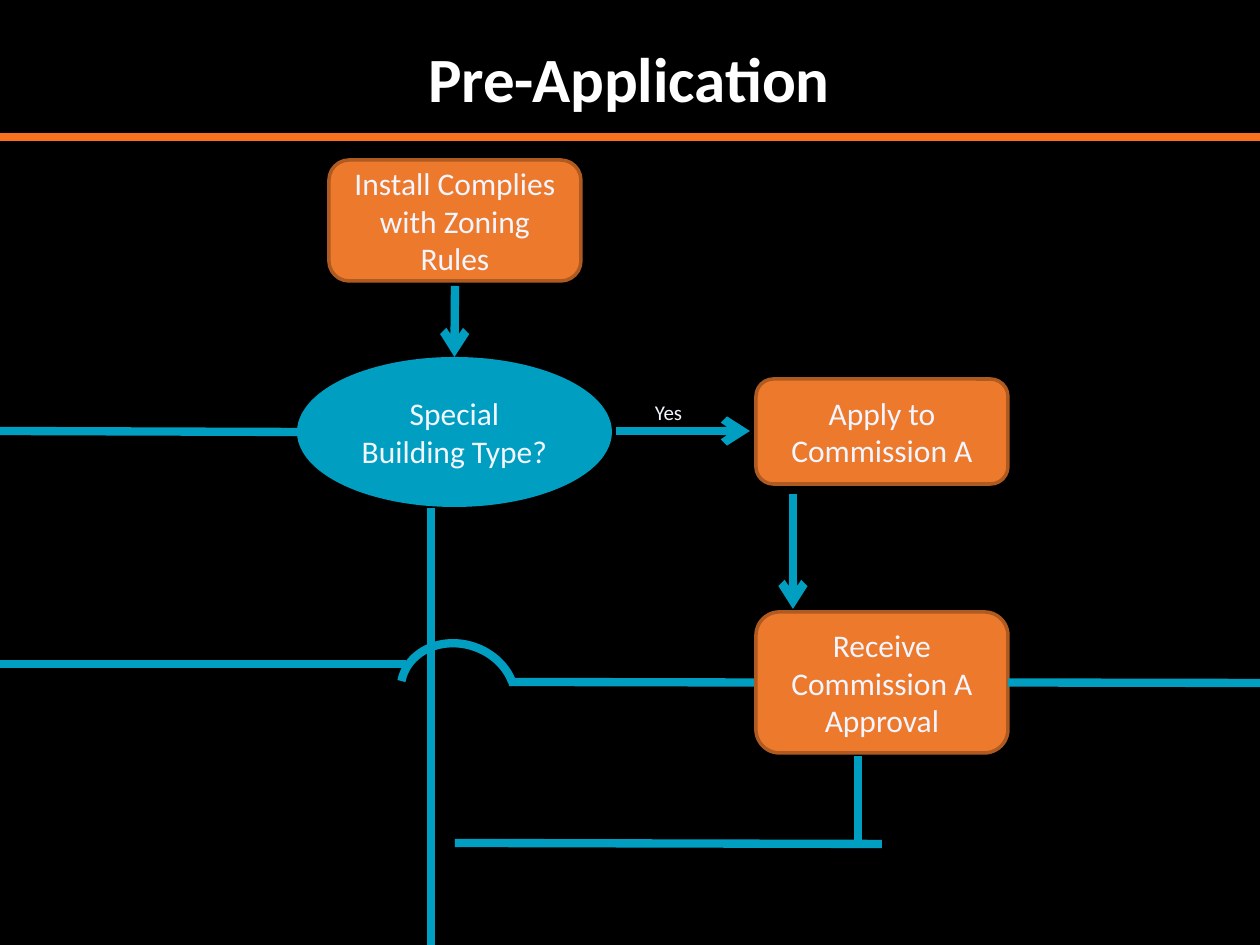
from lxml.etree import SubElement
from pptx import Presentation
from pptx.dml.color import RGBColor
from pptx.enum.shapes import MSO_CONNECTOR as Link, MSO_SHAPE as Shape
from pptx.enum.text import MSO_ANCHOR as Anchor, PP_ALIGN as Align
from pptx.oxml.ns import qn
from pptx.util import Emu, Pt

PX = 914400 // 126
COLORS = {
    "background": "000000",
    "title": "FFFFFF",
    "rule": "F9701F",
    "step": "ED7A2C",
    "step_edge": "AF5A21",
    "flow": "009FC2",
    "label": "F3F5FF",
}
FLOW_WIDTH = 4.75
TOP, LEFT, RIGHT = 0, 1, 3


def px(*lengths):
    return [Emu(length * PX) for length in lengths]


def color(name):
    return RGBColor.from_string(COLORS[name])


def write(box, text, size, ink="label", bold=False, anchor=Anchor.MIDDLE):
    frame = box.text_frame
    frame.word_wrap = True
    frame.vertical_anchor = anchor
    para = frame.paragraphs[0]
    para.alignment = Align.CENTER
    span = para.add_run()
    span.text = text
    span.font.name = "Calibri"
    span.font.size = Pt(size)
    span.font.bold = bold
    span.font.color.rgb = color(ink)


def add_text(page, place, text, size, **style):
    write(page.shapes.add_textbox(*px(*place)), text, size, **style)


def add_node(page, kind, place, text, fill, edge=None):
    node = page.shapes.add_shape(kind, *px(*place))
    node.shadow.inherit = False
    node.fill.solid()
    node.fill.fore_color.rgb = color(fill)
    if edge:
        node.line.color.rgb = color(edge)
        node.line.width = Pt(2)
    else:
        node.line.fill.background()
    write(node, text, 18)
    return node


def add_line(page, start, end, ink="flow", width=FLOW_WIDTH, arrow=False):
    line = page.shapes.add_connector(Link.STRAIGHT, *px(*start, *end))
    line.line.color.rgb = color(ink)
    line.line.width = Pt(width)
    if arrow:
        SubElement(line.line._get_or_add_ln(), qn("a:tailEnd"), type="arrow")
    SubElement(line._element.spPr, qn("a:effectLst"))
    return line


def add_bridge(page):
    """Arc that carries the crossing line over the vertical one."""
    arc = page.shapes.add_shape(Shape.ARC, *px(408, 636, 100, 116))
    arc.rotation = 287.9
    arc.adjustments[0] = 159
    arc.adjustments[1] = 35.86
    arc.shadow.inherit = False
    arc.fill.background()
    arc.line.color.rgb = color("flow")
    arc.line.width = Pt(FLOW_WIDTH)


def main():
    deck = Presentation()
    deck.slide_width, deck.slide_height = px(1260, 945)
    page = deck.slides.add_slide(deck.slide_layouts[6])
    page.background.fill.solid()
    page.background.fill.fore_color.rgb = color("background")

    add_line(page, (0, 137), (1260, 137), "rule", 4.5)
    add_text(page, (40, 38, 1178, 79), "Pre-Application", 36, ink="title", bold=True)

    from_approval = add_line(page, (756, 683), (509, 682))
    for start, end in [
        ((406, 664), (0, 664)),
        ((882, 844), (455, 843)),
        ((431, 508), (431, 945)),
        ((297, 432), (0, 431)),
        ((858, 756), (858, 847)),
    ]:
        add_line(page, start, end)

    steps = [
        (329, 160, 121, "Install Complies with Zoning Rules"),
        (756, 379, 105, "Apply to Commission A"),
        (756, 612, 141, "Receive Commission A Approval"),
    ]
    for left, top, height, text in steps:
        step = add_node(page, Shape.ROUNDED_RECTANGLE, (left, top, 252, height),
                        text, "step", "step_edge")
    approval = step
    question = add_node(page, Shape.OVAL, (297, 357, 315, 150),
                        "Special Building Type?", "flow")

    to_question = add_line(page, (455, 286), (455, 357), arrow=True)
    to_question.end_connect(question, TOP)
    add_line(page, (616, 431), (750, 431), arrow=True)
    add_line(page, (793, 494), (793, 609), arrow=True)
    from_approval.begin_connect(approval, LEFT)
    add_line(page, (1008, 683), (1260, 683)).begin_connect(approval, RIGHT)
    add_bridge(page)
    add_text(page, (635, 393, 67, 38), "Yes", 12, anchor=Anchor.TOP)

    deck.save("out.pptx")


if __name__ == "__main__":
    main()
